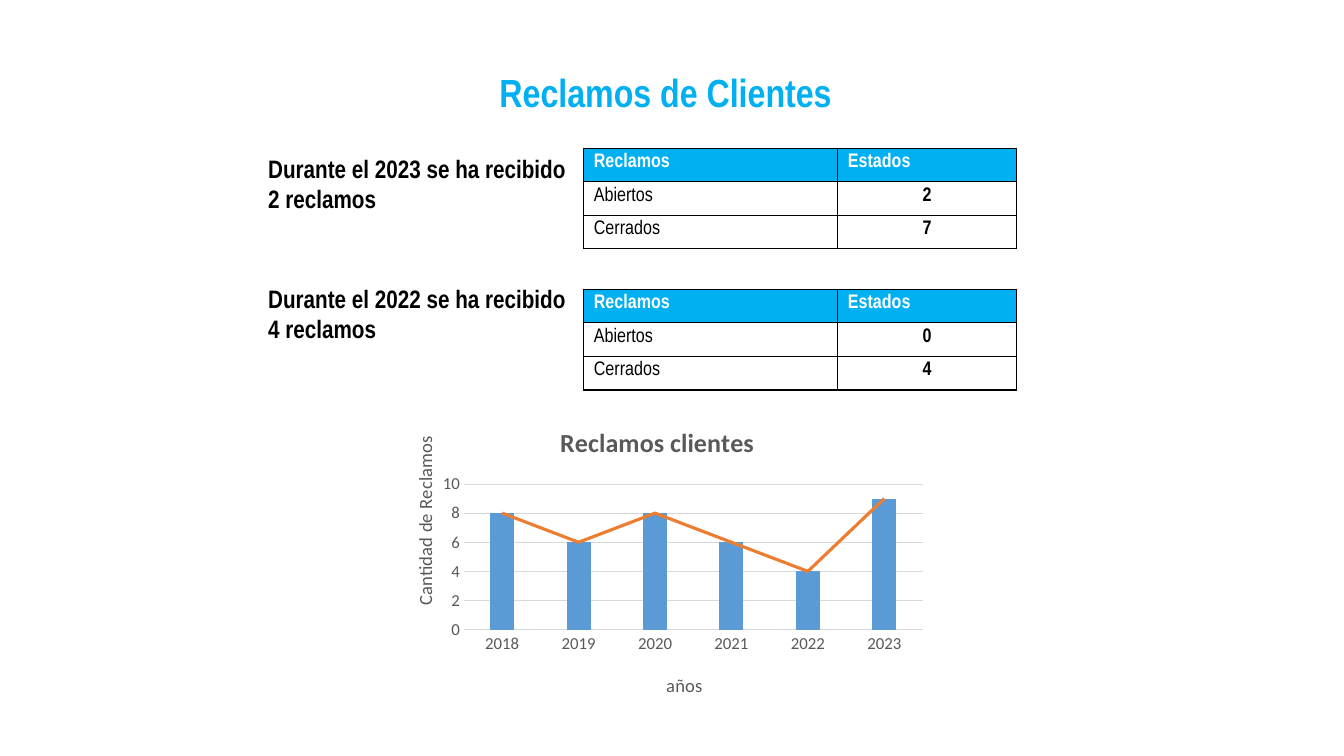
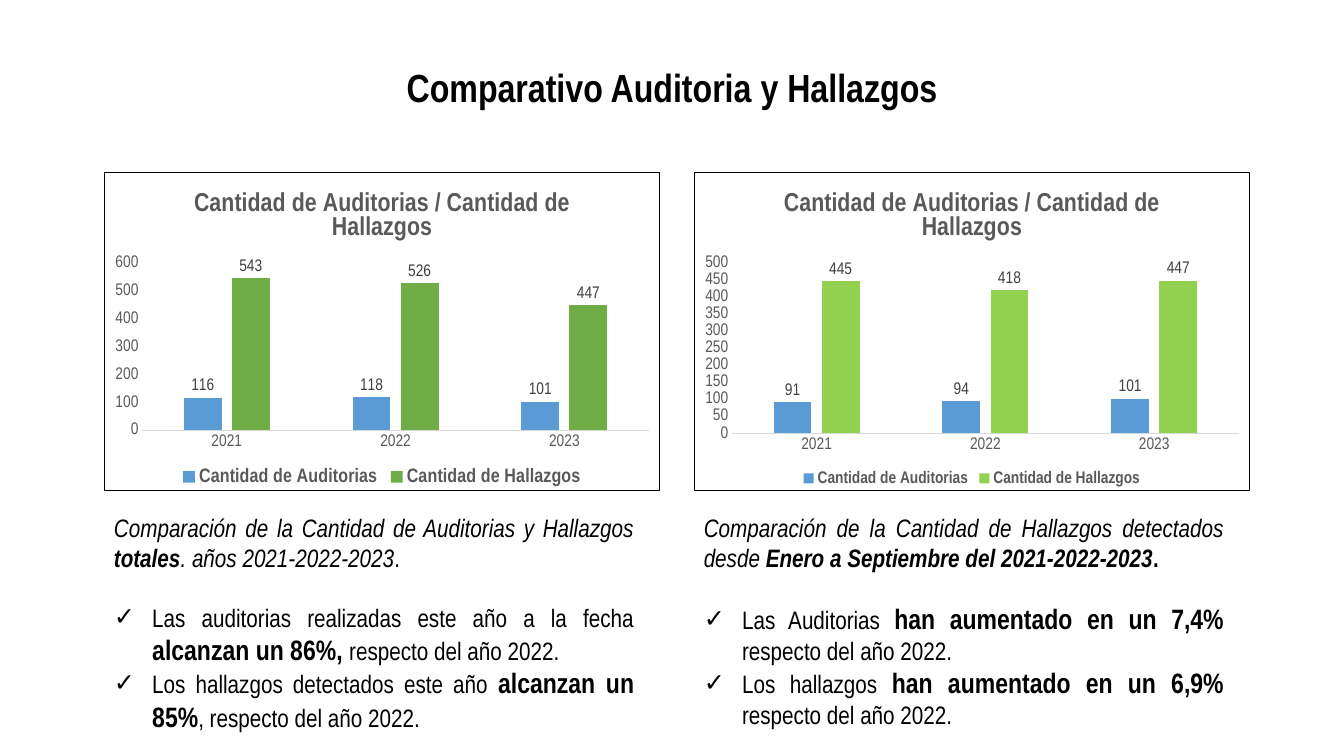
from lxml import etree
from pptx import Presentation
from pptx.chart.data import CategoryChartData
from pptx.dml.color import RGBColor
from pptx.enum.chart import (XL_CHART_TYPE, XL_LABEL_POSITION, XL_LEGEND_POSITION,
                             XL_MARKER_STYLE, XL_TICK_MARK)
from pptx.enum.text import MSO_ANCHOR, MSO_AUTO_SIZE, PP_ALIGN
from pptx.oxml import parse_xml
from pptx.oxml.ns import nsdecls, qn
from pptx.util import Emu, Pt

PX = 9144  # 100 px to the inch
LEFT, CENTER, JUSTIFY = PP_ALIGN.LEFT, PP_ALIGN.CENTER, PP_ALIGN.JUSTIFY
TOP, MIDDLE = MSO_ANCHOR.TOP, MSO_ANCHOR.MIDDLE
NO_FIT = MSO_AUTO_SIZE.NONE
COLUMN = XL_CHART_TYPE.COLUMN_CLUSTERED
OUTSIDE = XL_LABEL_POSITION.OUTSIDE_END
BOTTOM = XL_LEGEND_POSITION.BOTTOM
NO_TICK = XL_TICK_MARK.NONE
NO_MARK = XL_MARKER_STYLE.NONE
NARROW, CALIBRI = "Arial Narrow", "Calibri"
HUES = {"black": "000000", "white": "FFFFFF", "cyan": "00B0F0", "gray": "595959",
        "dark": "404040", "rule": "D9D9D9", "blue": "5B9BD5", "orange": "ED7D31",
        "green": "70AD47", "lime": "92D050"}


def px(*sizes):
    return [Emu(size * PX) for size in sizes]


def rgb(hue):
    return RGBColor.from_string(HUES[hue])


def style(font, size, hue="black", bold=False, name=NARROW):
    font.name, font.size, font.bold = name, Pt(size), bold
    font.color.rgb = rgb(hue)


def stroke(line, hue, width):
    line.color.rgb = rgb(hue)
    line.width = Pt(width)


def place(node, index, x, y, w=None, h=None):
    """Fix a chart part at fractions of the chart's size."""
    for old in node.findall(qn("c:layout")):
        node.remove(old)
    vals = [("x", x), ("y", y), ("w", w), ("h", h)]
    inner = '<c:layoutTarget val="inner"/>' if w else ""
    modes = '<c:xMode val="edge"/><c:yMode val="edge"/>'
    parts = "".join(f'<c:{key} val="{val}"/>' for key, val in vals if val)
    node.insert(index, parse_xml(
        f'<c:layout {nsdecls("c")}><c:manualLayout>{inner}{modes}{parts}'
        '</c:manualLayout></c:layout>'))


class Deck:
    def __init__(self):
        self.file = Presentation()
        self.file.slide_width, self.file.slide_height = px(1333, 750)

    def add(self):
        self.slide = self.file.slides.add_slide(self.file.slide_layouts[3])

    def frame(self, slot, box, anchor):
        """Move a placeholder and return its text frame."""
        shape = self.slide.placeholders[slot]
        shape.left, shape.top, shape.width, shape.height = px(*box)
        frame = shape.text_frame
        frame.word_wrap, frame.auto_size = True, NO_FIT
        frame.vertical_anchor = anchor
        return frame

    def title(self, text, box, hue):
        para = self.frame(0, box, MIDDLE).paragraphs[0]
        para.text, para.alignment = text, CENTER
        style(para.font, 28, hue, True)

    def body(self, slot, box, paras, align=LEFT):
        """Fill a body; marks in runs: b bold, i italic, + larger.
        Paragraphs after the first are ticked."""
        frame = self.frame(slot, box, TOP)
        for rank, runs in enumerate(paras):
            para = frame.add_paragraph() if rank else frame.paragraphs[0]
            para.alignment = align
            para.space_before = Pt(21 if rank == 1 else 0)
            props = para._p.get_or_add_pPr()
            indent = 38 * PX if rank else 0
            props.set("marL", str(indent))
            props.set("indent", str(-indent))
            if rank:
                etree.SubElement(props, qn("a:buChar")).set("char", "✓")
            else:
                etree.SubElement(props, qn("a:buNone"))
            style(para.font, 18)
            for text, marks in runs:
                run = para.add_run()
                run.text = text
                run.font.bold = "b" in marks
                run.font.italic = "i" in marks
                if "+" in marks:
                    run.font.size = Pt(20)

    def table(self, box, widths, rows):
        table = self.slide.shapes.add_table(len(rows), len(widths), *px(*box)).table
        table.first_row = table.horz_banding = False
        for col, width in zip(table.columns, px(*widths)):
            col.width = width
        for r, row in enumerate(rows):
            for c, text in enumerate(row):
                self.cell(table.cell(r, c), text, r == 0, c == 1)

    def cell(self, cell, text, head, count):
        cell.text = text
        para = cell.text_frame.paragraphs[0]
        para.alignment = CENTER if count and not head else LEFT
        style(para.font, 14, "white" if head else "black", head or count)
        if head:
            cell.fill.solid()
            cell.fill.fore_color.rgb = rgb("cyan")
        else:
            cell.fill.background()
        props = cell._tc.get_or_add_tcPr()
        for index, side in enumerate("LRTB"):
            props.insert(index, parse_xml(
                f'<a:ln{side} {nsdecls("a")} w="12700"><a:solidFill>'
                f'<a:srgbClr val="{HUES["black"]}"/></a:solidFill></a:ln{side}>'))

    def chart(self, box, title, cats, series, name=NARROW, border=False):
        """Add a column chart; series holds (name, values, hue)."""
        data = CategoryChartData()
        data.categories = cats
        for label, vals, _ in series:
            data.add_series(label, vals)
        chart = self.slide.shapes.add_chart(COLUMN, *px(*box), data).chart
        style(chart.font, 10, name=name)
        chart.has_legend = False
        chart.has_title = True
        self.label(chart.chart_title, title, 18.6, True, name)
        plot = chart.plots[0]
        plot.gap_width, plot.vary_by_categories = 219, False
        for item, (_, _, hue) in zip(plot.series, series):
            item.format.fill.solid()
            item.format.fill.fore_color.rgb = rgb(hue)
        for axis in (chart.category_axis, chart.value_axis):
            axis.major_tick_mark = axis.minor_tick_mark = NO_TICK
            style(axis.tick_labels.font, 12, "gray", name=name)
        stroke(chart.category_axis.format.line, "rule", 0.75)
        chart.value_axis.format.line.fill.background()
        chart.value_axis.has_major_gridlines = False
        fill = (f'<a:solidFill><a:srgbClr val="{HUES["black"]}"/></a:solidFill>'
                if border else "<a:noFill/>")
        chart.element.find(qn("c:chart")).addnext(parse_xml(
            f'<c:spPr {nsdecls("c", "a")}><a:noFill/>'
            f'<a:ln w="9525">{fill}</a:ln></c:spPr>'))
        return chart

    def label(self, title, text, size, bold, name):
        para = title.text_frame.paragraphs[0]
        para.text = text
        style(para.font, size, "gray", bold, name)

    def trend(self, chart, hue):
        """Turn the second column series into a line on the same axes."""
        bars = chart.element.find(".//" + qn("c:barChart"))
        item = bars.findall(qn("c:ser"))[1]
        for flag in item.findall(qn("c:invertIfNegative")):
            item.remove(flag)
        lines = parse_xml(f'<c:lineChart {nsdecls("c")}><c:grouping val="standard"/>'
                          '<c:varyColors val="0"/><c:marker val="1"/></c:lineChart>')
        lines.insert(2, item)
        for ref in bars.findall(qn("c:axId")):
            etree.SubElement(lines, qn("c:axId")).set("val", ref.get("val"))
        bars.addnext(lines)
        line = chart.plots[1].series[0]
        line.format.fill.background()
        stroke(line.format.line, hue, 2.25)
        line.marker.style, line.smooth = NO_MARK, False

    def claims(self, box):
        vals = (8, 6, 8, 6, 4, 9)
        years = [str(year) for year in range(2018, 2024)]
        chart = self.chart(box, "Reclamos clientes", years,
                           [("Series 1", vals, "blue"), ("Series 2", vals, "orange")],
                           CALIBRI)
        self.trend(chart, "orange")
        chart.value_axis.has_major_gridlines = True
        stroke(chart.value_axis.major_gridlines.format.line, "rule", 0.75)
        for axis, text, x, y in ((chart.category_axis, "años", 0.51, 0.86),
                                 (chart.value_axis, "Cantidad de Reclamos", 0.05, 0.08)):
            self.label(axis.axis_title, text, 13.3, False, CALIBRI)
            place(axis.axis_title.element, 1, x, y)
        place(chart.element.find(".//" + qn("c:plotArea")), 0, 0.15, 0.25, 0.83, 0.48)

    def audits(self, box, counts, finds, hue, size):
        names = "Cantidad de Auditorias", "Cantidad de Hallazgos"
        chart = self.chart(box, " / ".join(names), ("2021", "2022", "2023"),
                           [(names[0], counts, "blue"), (names[1], finds, hue)],
                           border=True)
        plot = chart.plots[0]
        plot.overlap = -27
        for item in plot.series:
            tags = item.data_labels
            tags.show_value, tags.position = True, OUTSIDE
            style(tags.font, 12, "dark")
        chart.has_legend = True
        chart.legend.position, chart.legend.include_in_layout = BOTTOM, False
        style(chart.legend.font, size, "gray", True)


def main():
    deck = Deck()
    deck.add()
    deck.title("Reclamos de Clientes", (298, 51, 724, 81), "cyan")
    years = ((1, "2023", "2", 147, 147, "2", "7"), (2, "2022", "4", 276, 287, "0", "4"))
    for slot, year, total, top, grid, opened, closed in years:
        text = f"Durante el {year} se ha recibido {total} reclamos"
        deck.body(slot, (256, top, 323, 71), [[(text, "b")]])
        deck.table((579, grid, 429, 100), (252, 177),
                   [("Reclamos", "Estados"), ("Abiertos", opened), ("Cerrados", closed)])
    deck.claims((378, 405, 548, 301))

    deck.add()
    deck.title("Comparativo Auditoria y Hallazgos", (341, 58, 651, 57), "black")
    tail = "respecto del año 2022."
    panels = (
        (103, (116, 118, 101), (543, 526, 447), "green", 14, [
            [("Comparación de la Cantidad de Auditorias y Hallazgos ", "i"),
             ("totales", "bi"), (". años 2021-2022-2023", "i"), (".", "")],
            [("Las auditorias realizadas este año a la fecha ", ""),
             ("alcanzan un 86%, ", "b+"), (tail, "")],
            [("Los hallazgos detectados este año ", ""),
             ("alcanzan un 85%", "b+"), (", " + tail, "")]]),
        (688, (91, 94, 101), (445, 418, 447), "lime", 12, [
            [("Comparación de la Cantidad de Hallazgos detectados desde ", "i"),
             ("Enero a Septiembre del 2021-2022-2023", "bi"), (".", "b")],
            [("Las Auditorias ", ""), ("han aumentado en un 7,4% ", "b+"), (tail, "")],
            [("Los hallazgos ", ""), ("han aumentado en un 6,9% ", "b+"), (tail, "")]]))
    for slot, (left, counts, finds, hue, size, paras) in enumerate(panels, 1):
        deck.audits((left, 171, 552, 316), counts, finds, hue, size)
        deck.body(slot, (left, 503, 536, 231), paras, JUSTIFY)
    deck.file.save("out.pptx")


if __name__ == "__main__":
    main()
